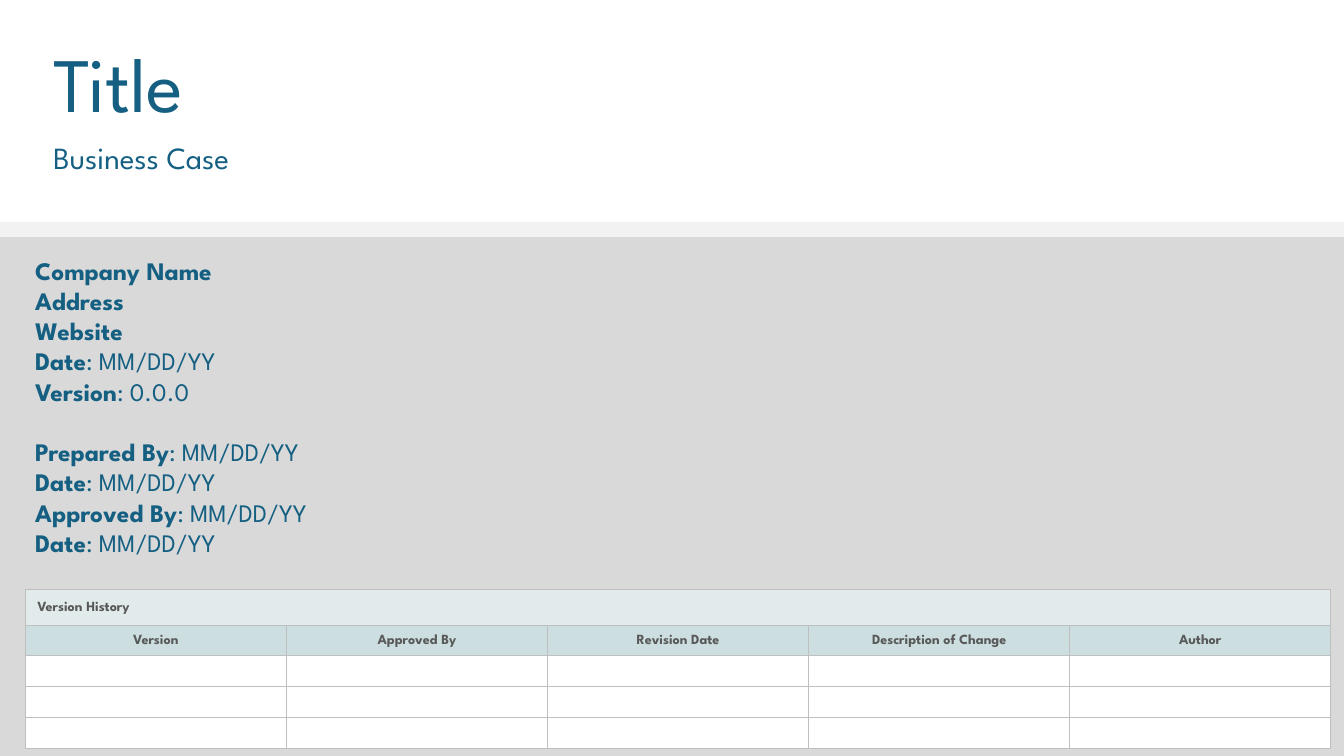
from lxml import etree
from pptx import Presentation
from pptx.dml.color import RGBColor
from pptx.enum.shapes import MSO_SHAPE
from pptx.enum.text import MSO_ANCHOR, MSO_AUTO_SIZE, PP_ALIGN
from pptx.oxml.ns import qn
from pptx.util import Inches, Pt

RECT = MSO_SHAPE.RECTANGLE
MIDDLE = MSO_ANCHOR.MIDDLE
GROW = MSO_AUTO_SIZE.SHAPE_TO_FIT_TEXT
LEFT, CENTER = PP_ALIGN.LEFT, PP_ALIGN.CENTER

THEME = {
    "font": "League Spartan",
    "blue": "156082", "text": "595959", "line": "BFBFBF",
    "panel": "D9D9D9", "strip": "F2F2F2",
    "band": "E2EBEB", "head": "CCDEDF", "body": "FFFFFF",
    "title": 55, "sub": 22, "info": 18, "cell": 10,
}
WIDE, HIGH = 13.33, 7.5


def add_run(para, text, size, color, bold=False):
    run = para.add_run()
    run.text = text
    look = {"name": THEME["font"], "size": Pt(THEME[size]), "bold": bold}
    for key, value in look.items():
        setattr(run.font, key, value)
    run.font.color.rgb = RGBColor.from_string(THEME[color])


def add_box(left, top, width, height):
    box = slide.shapes.add_textbox(*map(Inches, (left, top, width, height)))
    for key, value in {"word_wrap": True, "auto_size": GROW}.items():
        setattr(box.text_frame, key, value)
    return box.text_frame


deck = Presentation()
deck.slide_width, deck.slide_height = Inches(WIDE), Inches(HIGH)
slide = deck.slides.add_slide(deck.slide_layouts[6])

# Background bands
strip_top, panel_top = 2.2, 2.35
bands = [(panel_top, HIGH, "panel"), (strip_top, panel_top, "strip")]
for top, end, color in bands:
    band = slide.shapes.add_shape(
        RECT, 0, Inches(top), Inches(WIDE), Inches(end - top))
    band.shadow.inherit = False
    band.fill.solid()
    band.fill.fore_color.rgb = RGBColor.from_string(THEME[color])
    band.line.fill.background()

# Title and subtitle
heads = [("Title", "title", 0.3, 1.03), ("Business Case", "sub", 1.33, 0.47)]
for text, size, top, height in heads:
    frame = add_box(0.43, top, 6.08, height)
    add_run(frame.paragraphs[0], text, size, "blue")

# Company details, in two groups set apart by spacing
date = ": MM/DD/YY"
facts = [
    ("Company Name", ""), ("Address", ""), ("Website", ""),
    ("Date", date), ("Version", ": 0.0.0"),
    ("Prepared By", date), ("Date", date),
    ("Approved By", date), ("Date", date),
]
frame = add_box(0.25, 2.48, 11.19, 3.13)
for i, (label, value) in enumerate(facts):
    para = frame.paragraphs[0] if i == 0 else frame.add_paragraph()
    add_run(para, label, "info", "blue", True)
    if value:
        add_run(para, value, "info", "blue")
    if label == "Version":
        para.space_after = Pt(21.6)

# Version history table
names = ["Version", "Approved By", "Revision Date",
         "Description of Change", "Author"]
cols, rows = len(names), 5
left, top, width, height, first = 0.25, 5.85, 12.95, 1.57, 0.35
table = slide.shapes.add_table(
    rows, cols, *map(Inches, (left, top, width, height))).table
for flag in ("first_row", "horz_banding"):
    setattr(table, flag, False)
for col in table.columns:
    col.width = Inches(width / cols)
for i, row in enumerate(table.rows):
    row.height = Inches((height - first) / (rows - 1) if i else first)
table.cell(0, 0).merge(table.cell(0, cols - 1))

fills = ["band", "head"] + ["body"] * (rows - 2)
texts = {(0, 0): "Version History"}
texts.update({(1, c): name for c, name in enumerate(names)})
for r, fill in enumerate(fills):
    for c in range(cols):
        cell = table.cell(r, c)
        form = {
            "vertical_anchor": MIDDLE,
            "margin_left": Inches(0.01 if r else 0.12),
            "margin_right": Inches(0.01),
            "margin_top": Inches(0.01),
            "margin_bottom": 0,
        }
        for key, value in form.items():
            setattr(cell, key, value)

        # Borders come before the fill in the cell's XML
        props = cell._tc.get_or_add_tcPr()
        for side in ("a:lnL", "a:lnR", "a:lnT", "a:lnB"):
            edge = etree.SubElement(props, qn(side), w=str(Pt(0.5)))
            paint = etree.SubElement(edge, qn("a:solidFill"))
            etree.SubElement(paint, qn("a:srgbClr"), val=THEME["line"])
        cell.fill.solid()
        cell.fill.fore_color.rgb = RGBColor.from_string(THEME[fill])

        para = cell.text_frame.paragraphs[0]
        if (r, c) in texts:
            para.alignment = CENTER if r else LEFT
            add_run(para, texts[r, c], "cell", "text", True)
        else:
            etree.SubElement(para._p, qn("a:endParaRPr"),
                             sz=str(THEME["cell"] * 100))

deck.save("out.pptx")
